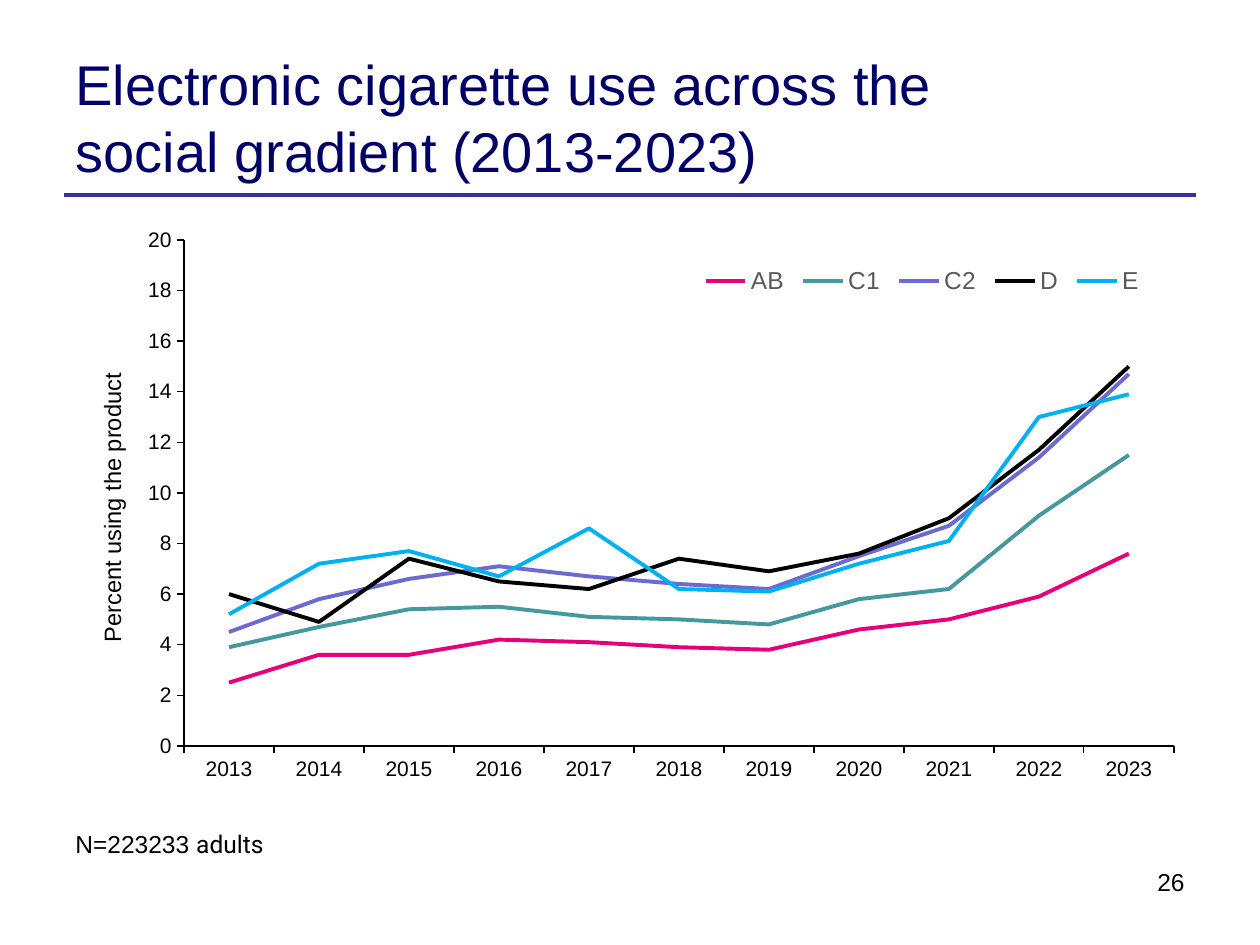
from lxml import etree
from pptx import Presentation, util as u
from pptx.chart.data import CategoryChartData
from pptx.dml.color import RGBColor
from pptx.enum import chart as charts, shapes, text
from pptx.oxml.ns import qn

SCALE = 914400 / 126
YEARS = [str(year) for year in range(2013, 2024)]
GRADES = [
    ("AB", "E5007B", [2.5, 3.6, 3.6, 4.2, 4.1, 3.9, 3.8, 4.6, 5, 5.9, 7.6]),
    ("C1", "4597A0", [3.9, 4.7, 5.4, 5.5, 5.1, 5, 4.8, 5.8, 6.2, 9.1, 11.5]),
    ("C2", "6B6BCF", [4.5, 5.8, 6.6, 7.1, 6.7, 6.4, 6.2, 7.5, 8.7, 11.4, 14.7]),
    ("D", "000000", [6, 4.9, 7.4, 6.5, 6.2, 7.4, 6.9, 7.6, 9, 11.7, 15]),
    ("E", "00B0F0", [5.2, 7.2, 7.7, 6.7, 8.6, 6.2, 6.1, 7.2, 8.1, 13, 13.9]),
]
CHART_AREA = (63, 217, 1134, 624)


def px(*lengths):
    """Turn pixel lengths into EMU."""
    return [u.Emu(round(length * SCALE)) for length in lengths]


def set_font(font, size, color="000000", name="Arial"):
    """Set size, colour and typeface of a font."""
    font.size, font.name, font.bold = u.Pt(size), name, False
    font.color.rgb = RGBColor.from_string(color)


def set_line(line, color, width):
    """Set colour and width of a line."""
    line.color.rgb = RGBColor.from_string(color)
    line.width = u.Pt(width)


def add_title(slide, words, area):
    """Place and format the title placeholder."""
    title = slide.shapes.title
    title.left, title.top, title.width, title.height = px(*area)
    frame = title.text_frame
    frame.text = words
    frame.word_wrap = True
    frame.auto_size = text.MSO_AUTO_SIZE.NONE
    frame.vertical_anchor = text.MSO_ANCHOR.MIDDLE
    para = frame.paragraphs[0]
    para.alignment = text.PP_ALIGN.LEFT
    para.line_spacing = 1.0
    set_font(para.runs[0].font, 32, "000066")


def add_rule(slide, left, right, top):
    """Draw the horizontal rule under the title."""
    rule = slide.shapes.add_connector(
        shapes.MSO_CONNECTOR.STRAIGHT, *px(left, top, right, top))
    set_line(rule.line, "333399", 2.25)
    etree.SubElement(rule._element.spPr, qn("a:effectLst"))


def add_text(slide, spans, area, align=text.PP_ALIGN.LEFT):
    """Add a one-paragraph text box from (words, typeface) spans."""
    frame = slide.shapes.add_textbox(*px(*area)).text_frame
    frame.word_wrap = True
    para = frame.paragraphs[0]
    para.alignment = align
    for words, typeface in spans:
        span = para.add_run()
        span.text = words
        set_font(span.font, 14, name=typeface)


def place_part(part, index, left, top, width=None, height=None):
    """Fix a chart part at slide pixels; a plot area is measured inside its axes."""
    for old in part.findall(qn("c:layout")):
        part.remove(old)
    layout = etree.Element(qn("c:layout"))
    manual = etree.SubElement(layout, qn("c:manualLayout"))
    values = [("xMode", "edge"), ("yMode", "edge")]
    if part.tag == qn("c:plotArea"):
        values.insert(0, ("layoutTarget", "inner"))
    x, y, full_width, full_height = CHART_AREA
    values += [("x", (left - x) / full_width), ("y", (top - y) / full_height)]
    if width:
        values += [("w", width / full_width), ("h", height / full_height)]
    for name, value in values:
        shown = value if isinstance(value, str) else f"{value:.4f}"
        etree.SubElement(manual, qn(f"c:{name}"), val=shown)
    part.insert(index, layout)


def format_axis(axis):
    """Give an axis outward ticks, a thin black line and plain labels."""
    axis.has_major_gridlines = False
    axis.major_tick_mark = charts.XL_TICK_MARK.OUTSIDE
    axis.minor_tick_mark = charts.XL_TICK_MARK.NONE
    set_line(axis.format.line, "000000", 0.75)
    set_font(axis.tick_labels.font, 12)


def add_line_chart(slide):
    """Add the line chart of use by social grade."""
    data = CategoryChartData()
    data.categories = YEARS
    for name, _, values in GRADES:
        data.add_series(name, values)
    chart = slide.shapes.add_chart(
        charts.XL_CHART_TYPE.LINE, *px(*CHART_AREA), data).chart
    chart.has_title = False
    set_font(chart.font, 10)
    chart.plots[0].vary_by_categories = False
    for series, (_, color, _) in zip(chart.plots[0].series, GRADES):
        series.smooth = False
        series.marker.style = charts.XL_MARKER_STYLE.NONE
        set_line(series.format.line, color, 2.25)

    format_axis(chart.category_axis)
    value_axis = chart.value_axis
    format_axis(value_axis)
    value_axis.minimum_scale, value_axis.maximum_scale = 0, 20
    value_axis.major_unit = 2
    frame = value_axis.axis_title.text_frame
    frame.text = "Percent using the product"
    set_font(frame.paragraphs[0].runs[0].font, 13.5)

    chart.has_legend = True
    legend = chart.legend
    legend.position = charts.XL_LEGEND_POSITION.BOTTOM
    legend.include_in_layout = False
    set_font(legend.font, 14, "595959")

    place_part(chart._chartSpace.chart.plotArea, 0, 184, 240, 990, 506)
    place_part(value_axis.axis_title._element, 1, 93, 369)
    place_part(legend._element, 1, 695, 262, 455, 38)


def main():
    """Build and save the slide."""
    deck = Presentation()
    deck.slide_width, deck.slide_height = px(1260, 945)
    page = deck.slides.add_slide(deck.slide_layouts[5])
    add_rule(page, 64, 1196, 195)
    add_title(page, "Electronic cigarette use across the social gradient (2013-2023)",
              (63, 38, 994, 157))
    add_line_chart(page)
    add_text(page, [("26", "Arial")], (848, 861, 349, 65), text.PP_ALIGN.RIGHT)
    add_text(page, [("N=223233 ", "Arial"), ("adults", "Roboto")], (63, 823, 1072, 43))
    deck.save("out.pptx")


if __name__ == "__main__":
    main()
